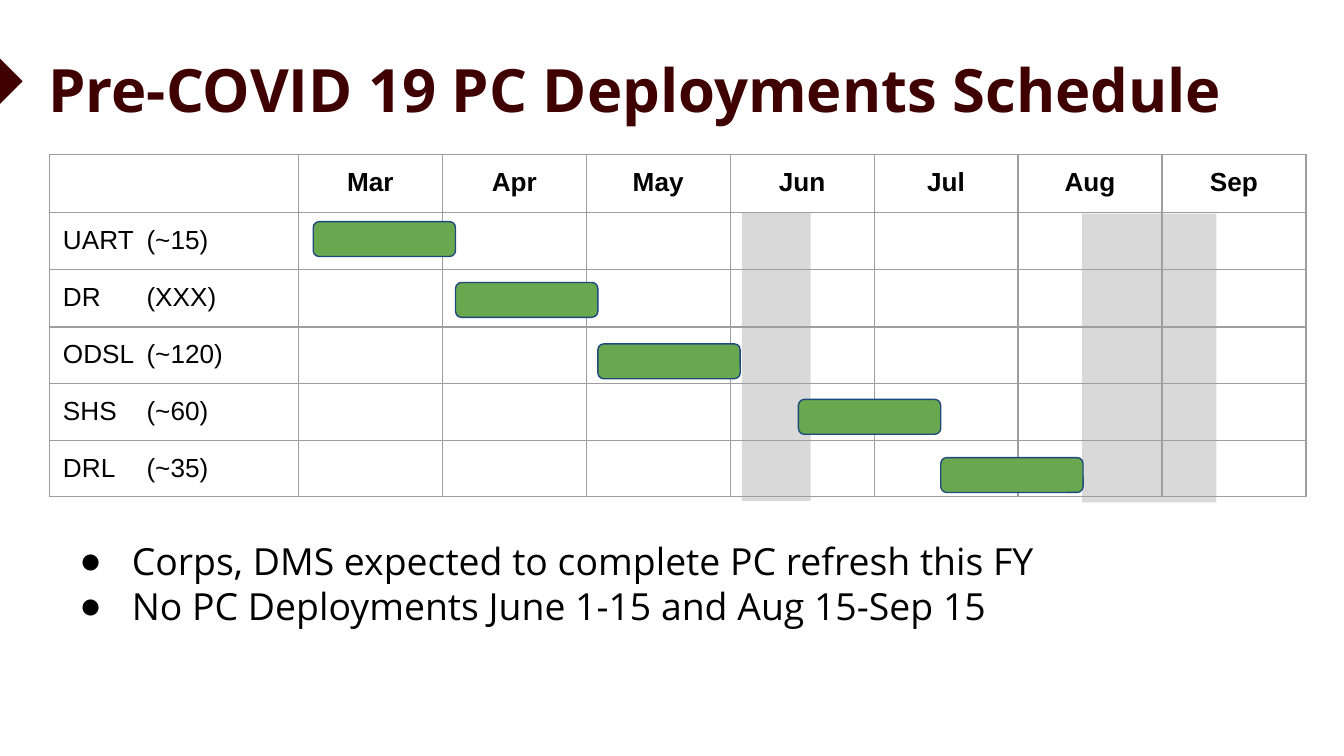
from lxml import etree
from pptx import Presentation
from pptx.dml.color import RGBColor
from pptx.enum.shapes import MSO_SHAPE as SHAPE
from pptx.enum.text import MSO_ANCHOR as ANCHOR, MSO_AUTO_SIZE as AUTO, PP_ALIGN as ALIGN
from pptx.oxml.ns import qn
from pptx.util import Cm, Pt

MAROON = RGBColor(0x3E, 0x00, 0x01)
BLACK = RGBColor(0x00, 0x00, 0x00)
GREY = RGBColor(0xD9, 0xD9, 0xD9)
GREEN = RGBColor(0x6A, 0xA8, 0x4F)
NAVY = RGBColor(0x1F, 0x49, 0x7D)
BORDER = RGBColor(0x9E, 0x9E, 0x9E)

MONTHS = ["Mar", "Apr", "May", "Jun", "Jul", "Aug", "Sep"]
GROUPS = [("UART", "(~15)"), ("DR", "(XXX)"), ("ODSL", "(~120)"),
          ("SHS", "(~60)"), ("DRL", "(~35)")]
BULLETS = ["Corps, DMS expected to complete PC refresh this FY",
           "No PC Deployments June 1-15 and Aug 15-Sep 15"]

TITLE_FONT = dict(name="Open Sans", size=Pt(32), bold=True)
HEAD_FONT = dict(name="Arial", size=Pt(14), bold=True)
LABEL_FONT = dict(name="Arial", size=Pt(14), bold=False)
BODY_FONT = dict(name="Open Sans", size=Pt(20), bold=False)


def add_block(kind, x, y, w, h, color):
    sp = s.shapes.add_shape(kind, Cm(x), Cm(y), Cm(w), Cm(h))
    sp.shadow.inherit = False
    sp.fill.solid()
    sp.fill.fore_color.rgb = color
    sp.line.fill.background()
    return sp


def add_text(p, text, fmt, color):
    r = p.add_run()
    r.text = text
    for key, value in fmt.items():
        setattr(r.font, key, value)
    r.font.color.rgb = color


prs = Presentation()
prs.slide_width, prs.slide_height = Cm(25.4), Cm(14.29)
s = prs.slides.add_slide(prs.slide_layouts[1])
title, body = s.shapes.title, s.placeholders[1]

# Title and body frames
for sp, box, anchor, inset in [
        (title, (0.66, 1.04, 23.47, 1.27), ANCHOR.MIDDLE, 0.13),
        (body, (0.97, 9.93, 23.75, 3.18), ANCHOR.TOP, 0.25)]:
    sp.left, sp.top, sp.width, sp.height = [Cm(v) for v in box]
    tf = sp.text_frame
    frame = dict(vertical_anchor=anchor, word_wrap=True, auto_size=AUTO.NONE,
                 margin_left=Cm(0.25), margin_right=Cm(0.25),
                 margin_top=Cm(inset), margin_bottom=Cm(inset))
    for key, value in frame.items():
        setattr(tf, key, value)

p = title.text_frame.paragraphs[0]
p.alignment = ALIGN.LEFT
add_text(p, "Pre-COVID 19 PC Deployments Schedule", TITLE_FONT, MAROON)

# Bulleted notes
tf = body.text_frame
for i, text in enumerate(BULLETS):
    p = tf.add_paragraph() if i else tf.paragraphs[0]
    p.alignment = ALIGN.LEFT
    p.space_before = Pt(0)
    pPr = p._p.get_or_add_pPr()
    pPr.set("marL", str(Cm(1.27)))
    pPr.set("indent", str(-Cm(0.99)))
    clr = etree.SubElement(pPr, qn("a:buClr"))
    etree.SubElement(clr, qn("a:srgbClr"), val=str(BLACK))
    etree.SubElement(pPr, qn("a:buChar"), char="●")
    add_text(p, text, BODY_FONT, BLACK)

# Arrow marker at the left edge
marker = add_block(SHAPE.RIGHT_TRIANGLE, -0.89, 0.99, 1.09, 1.09, MAROON)
marker.rotation = 225

# Periods without deployments
for x, y, w in [(14.02, 4.01, 1.3), (20.45, 4.04, 2.54)]:
    add_block(SHAPE.RECTANGLE, x, y, w, 5.46, GREY)

# Schedule grid
rows, cols = len(GROUPS) + 1, len(MONTHS) + 1
frame = s.shapes.add_table(rows, cols, Cm(0.94), Cm(2.92), Cm(23.75), Cm(6.5))
table = frame.table
table.first_row = table.horz_banding = False
for i, col in enumerate(table.columns):
    col.width = Cm(2.72 if i else 4.7)
for row, h in zip(table.rows, [1.1, 1.07, 1.09, 1.07, 1.07, 1.07]):
    row.height = Cm(h)

for r in range(rows):
    for c in range(cols):
        cell = table.cell(r, c)
        p = cell.text_frame.paragraphs[0]
        if (r == 0) != (c == 0):
            for side in ("left", "right", "top", "bottom"):
                setattr(cell, f"margin_{side}", Cm(0.25))
        if r == 0 and c:
            p.alignment = ALIGN.CENTER
            add_text(p, MONTHS[c - 1], HEAD_FONT, BLACK)
        elif r and c == 0:
            tabs = etree.SubElement(p._p.get_or_add_pPr(), qn("a:tabLst"))
            etree.SubElement(tabs, qn("a:tab"), pos=str(Cm(1.58)), algn="l")
            add_text(p, "\t".join(GROUPS[r - 1]), LABEL_FONT, BLACK)
        tcPr = cell._tc.get_or_add_tcPr()
        for side in ("a:lnL", "a:lnR", "a:lnT", "a:lnB"):
            ln = etree.SubElement(tcPr, qn(side), w=str(Pt(0.75)))
            fill = etree.SubElement(ln, qn("a:solidFill"))
            etree.SubElement(fill, qn("a:srgbClr"), val=str(BORDER))
        cell.fill.background()

# Deployment bars
for x, y in [(5.92, 4.19), (8.61, 5.34), (11.3, 6.5), (15.09, 7.55), (17.78, 8.65)]:
    bar = add_block(SHAPE.ROUNDED_RECTANGLE, x, y, 2.69, 0.66, GREEN)
    bar.adjustments[0] = 0.17
    bar.line.color.rgb = NAVY
    bar.line.width = Pt(0.75)

prs.save("out.pptx")
